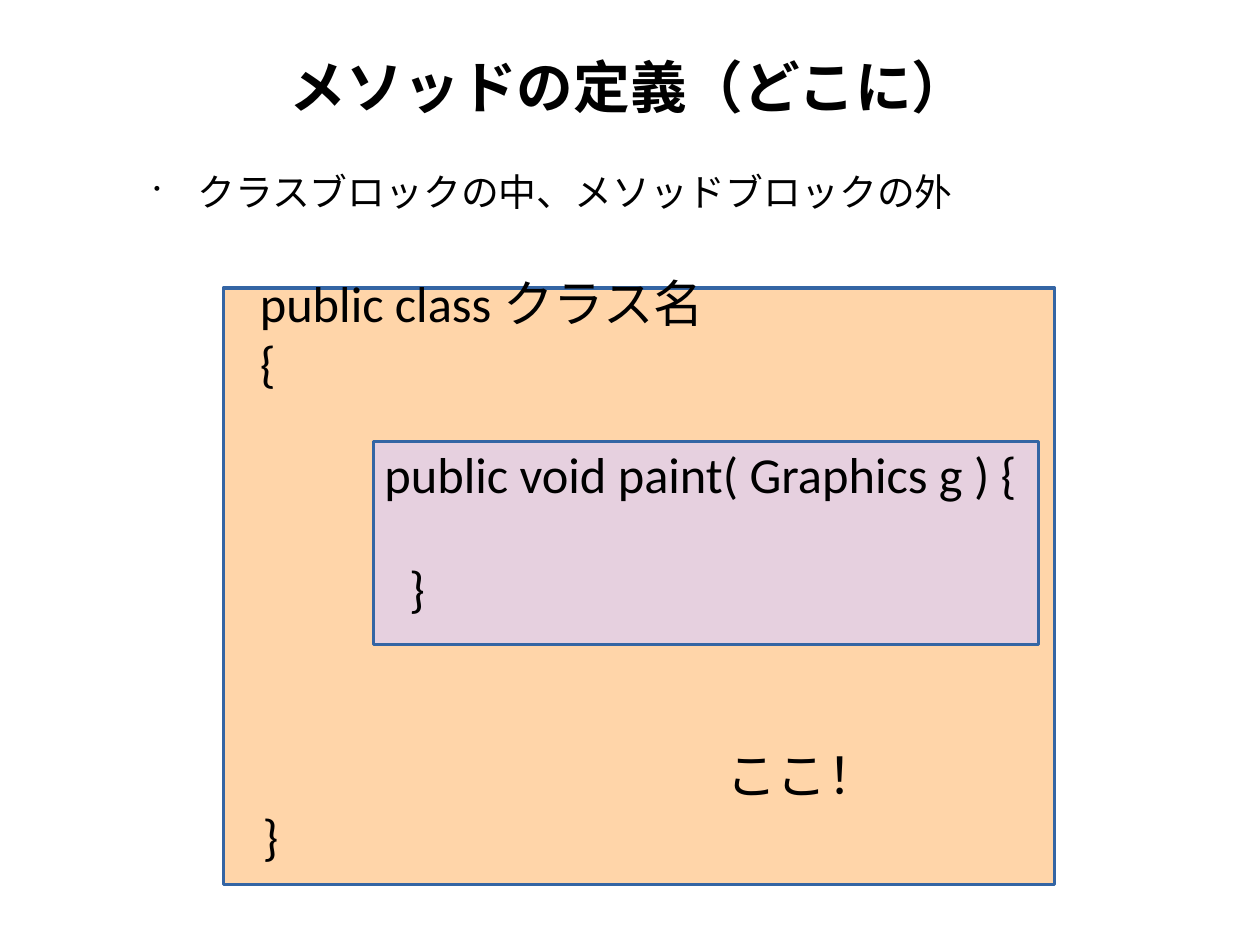
from dataclasses import dataclass

from lxml.etree import SubElement
from pptx import Presentation
from pptx.dml.color import RGBColor
from pptx.enum.shapes import MSO_SHAPE as Shape
from pptx.enum.text import MSO_ANCHOR as Anchor, MSO_AUTO_SIZE as AutoSize, PP_ALIGN as Align
from pptx.oxml.ns import qn
from pptx.util import Cm, Pt


@dataclass(frozen=True)
class Theme:
    ink: str = "000000"
    border: str = "3465A4"
    class_fill: str = "FFD5A9"
    method_fill: str = "E6D0DF"
    latin_font: str = "Calibri"
    japanese_font: str = "Noto Sans CJK JP"
    title_size: int = 36
    bullet_size: int = 24
    code_size: int = 32
    border_width: float = 2


class MethodSlide:
    """Draws the elements of one slide in a shared style."""

    def __init__(self, presentation, theme):
        self.theme = theme
        self.slide = presentation.slides.add_slide(presentation.slide_layouts[5])

    def format_text(self, frame, size, font, align, anchor, inset=0, bold=False):
        frame.vertical_anchor = anchor
        frame.margin_left = frame.margin_right = Cm(inset)
        frame.margin_top = frame.margin_bottom = Cm(inset)
        for paragraph in frame.paragraphs:
            paragraph.alignment = align
            for run in paragraph.runs:
                run.font.size = Pt(size)
                run.font.bold = bold
                run.font.color.rgb = RGBColor.from_string(self.theme.ink)
                run.font.name = font
                east_asian = SubElement(run.font._element, qn("a:ea"))
                east_asian.set("typeface", self.theme.japanese_font)

    def title(self, text, left, top, width, height):
        shape = self.slide.shapes.title
        shape.left, shape.top = Cm(left), Cm(top)
        shape.width, shape.height = Cm(width), Cm(height)
        frame = shape.text_frame
        frame.text = text
        frame.auto_size = AutoSize.NONE
        self.format_text(frame, self.theme.title_size, self.theme.japanese_font,
                         Align.CENTER, Anchor.MIDDLE, bold=True)

    def bullet(self, text, left, top, width, height):
        shape = self.slide.shapes.add_textbox(Cm(left), Cm(top), Cm(width), Cm(height))
        frame = shape.text_frame
        frame.word_wrap = True
        frame.text = text
        properties = frame.paragraphs[0]._p.get_or_add_pPr()
        properties.set("marL", str(Cm(1.68)))
        properties.set("indent", str(Cm(-0.97)))
        SubElement(properties, qn("a:buSzPct")).set("val", "50000")
        SubElement(properties, qn("a:buChar")).set("char", "•")
        self.format_text(frame, self.theme.bullet_size, self.theme.japanese_font,
                         Align.JUSTIFY, Anchor.TOP)

    def block(self, fill, left, top, width, height):
        shape = self.slide.shapes.add_shape(
            Shape.RECTANGLE, Cm(left), Cm(top), Cm(width), Cm(height))
        shape.shadow.inherit = False
        shape.fill.solid()
        shape.fill.fore_color.rgb = RGBColor.from_string(fill)
        shape.line.color.rgb = RGBColor.from_string(self.theme.border)
        shape.line.width = Pt(self.theme.border_width)

    def code(self, text, left, top, width, align=Align.LEFT):
        shape = self.slide.shapes.add_textbox(Cm(left), Cm(top), Cm(width), Cm(1.47))
        frame = shape.text_frame
        frame.word_wrap = False
        frame.auto_size = AutoSize.SHAPE_TO_FIT_TEXT
        frame.text = text
        self.format_text(frame, self.theme.code_size, self.theme.latin_font,
                         align, Anchor.MIDDLE, inset=0.1)


def main():
    presentation = Presentation()
    presentation.slide_width, presentation.slide_height = Cm(28.22), Cm(21.16)
    theme = Theme()
    slide = MethodSlide(presentation, theme)

    slide.title("メソッドの定義（どこに）", 2.74, 0.56, 22.71, 2.72)
    slide.bullet("クラスブロックの中、メソッドブロックの外", 2.74, 3.78, 22.71, 14.63)

    slide.block(theme.class_fill, 5, 6.45, 18.62, 13.36)
    slide.block(theme.method_fill, 8.36, 9.88, 14.91, 4.55)

    slide.code("public class クラス名\v{", 5.72, 6.71, 10.8)
    slide.code("}", 5.74, 17.96, 0.64, Align.CENTER)
    slide.code("public void paint( Graphics g ) {", 8.51, 9.86, 14.61)
    slide.code("}", 9.02, 12.42, 0.64, Align.CENTER)
    slide.code("ここ！", 16.15, 16.61, 3.63, Align.CENTER)

    presentation.save("out.pptx")


if __name__ == "__main__":
    main()
